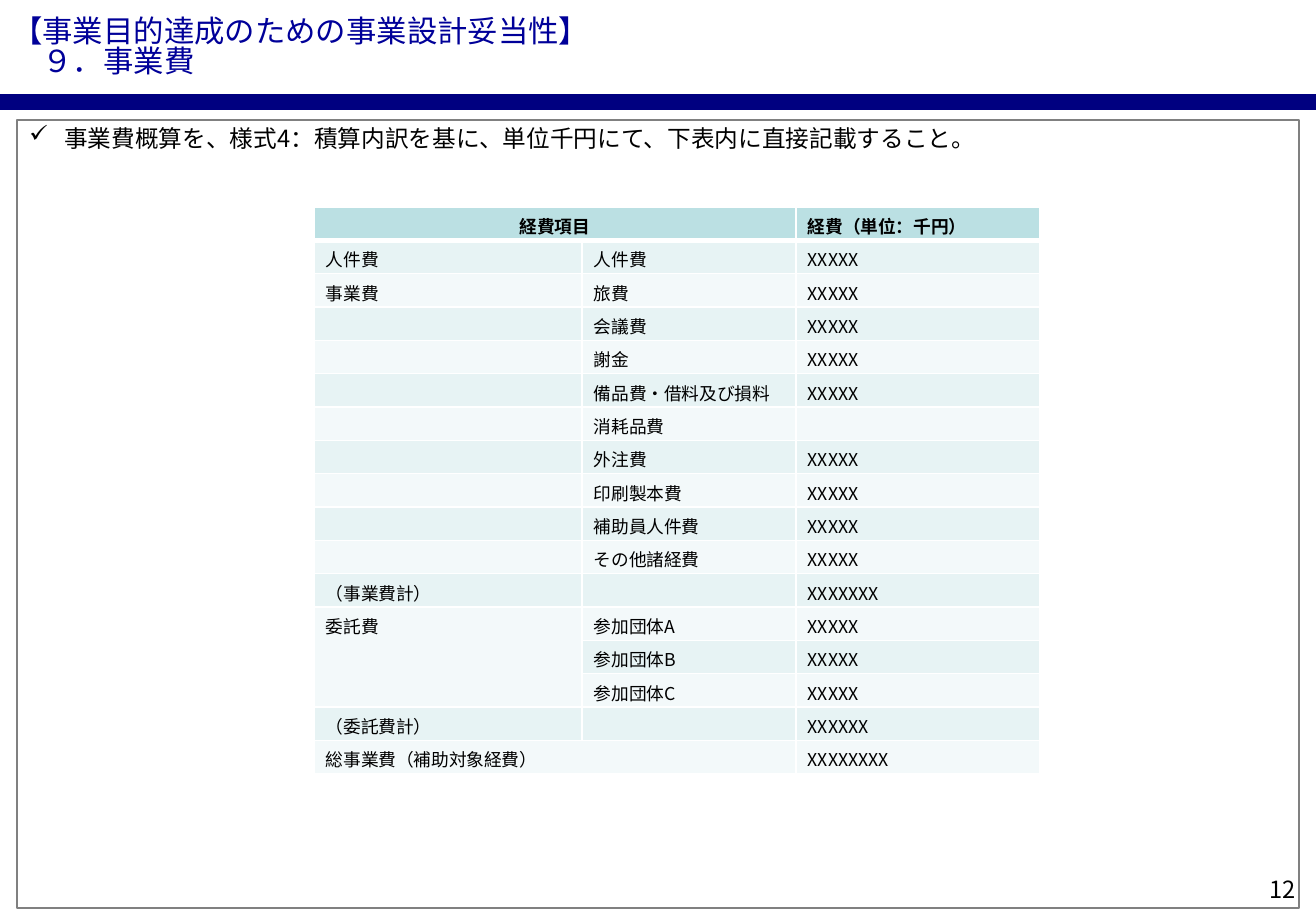
"""Builds the project cost slide with its expense table."""
from lxml.etree import SubElement
from pptx import Presentation
from pptx.dml.color import RGBColor
from pptx.enum.shapes import MSO_CONNECTOR as Connector
from pptx.enum.text import MSO_ANCHOR as Anchor, MSO_AUTO_SIZE as AutoSize, PP_ALIGN as Align
from pptx.oxml.ns import qn
from pptx.util import Emu, Pt

PX = 914400 / 121.5
FONT = "Noto Sans CJK JP"
BLACK = RGBColor(0x00, 0x00, 0x00)
WHITE = RGBColor(0xFF, 0xFF, 0xFF)
TITLE_BLUE = RGBColor(0x00, 0x00, 0x99)
RULE_NAVY = RGBColor(0x00, 0x00, 0x80)
FRAME_GREY = RGBColor(0x80, 0x80, 0x80)
HEADER_TEAL = RGBColor(0xBB, 0xE0, 0xE3)
BANDS = (RGBColor(0xF3, 0xF9, 0xFA), RGBColor(0xE7, 0xF3, 0xF4))

EXPENSES = [
    ("経費項目", "", "経費（単位：千円）"),
    ("人件費", "人件費", "XXXXX"),
    ("事業費", "旅費", "XXXXX"),
    ("", "会議費", "XXXXX"),
    ("", "謝金", "XXXXX"),
    ("", "備品費・借料及び損料", "XXXXX"),
    ("", "消耗品費", ""),
    ("", "外注費", "XXXXX"),
    ("", "印刷製本費", "XXXXX"),
    ("", "補助員人件費", "XXXXX"),
    ("", "その他諸経費", "XXXXX"),
    ("（事業費計）", "", "XXXXXXX"),
    ("委託費", "参加団体A", "XXXXX"),
    ("", "参加団体B", "XXXXX"),
    ("", "参加団体C", "XXXXX"),
    ("（委託費計）", "", "XXXXXX"),
    ("総事業費（補助対象経費）", "", "XXXXXXXX"),
]
MERGES = [((0, 0), (0, 1)), ((12, 0), (14, 0)), ((16, 0), (16, 1))]


def px(length):
    return Emu(round(length * PX))


def put_text(frame, text, size, color=BLACK, bold=False, align=Align.LEFT, spacing=None):
    frame.word_wrap = True
    for index, line in enumerate(text.split("\n")):
        paragraph = frame.paragraphs[0] if index == 0 else frame.add_paragraph()
        paragraph.alignment = align
        paragraph.space_before = Pt(0)
        if spacing:
            paragraph.line_spacing = spacing
        if not line:
            SubElement(paragraph._p, qn("a:endParaRPr"), sz=str(round(size * 100)))
            continue
        run = paragraph.add_run()
        run.text = line
        run.font.size = Pt(size)
        run.font.bold = bold
        run.font.color.rgb = color
        run.font.name = FONT
        SubElement(run.font._element, qn("a:ea"), typeface=FONT)


class CostSlide:
    def __init__(self, deck):
        self.slide = deck.slides.add_slide(deck.slide_layouts[1])
        self.shapes = self.slide.shapes

    def place(self, shape, left, top, width, height):
        shape.left, shape.top = px(left), px(top)
        shape.width, shape.height = px(width), px(height)
        shape.text_frame.auto_size = AutoSize.NONE

    def title(self, text, *box):
        heading = self.shapes.title
        self.place(heading, *box)
        heading.text_frame.vertical_anchor = Anchor.MIDDLE
        put_text(heading.text_frame, text, 18, color=TITLE_BLUE, spacing=0.82)

    def checklist(self, text, *box):
        body = self.slide.placeholders[1]
        self.place(body, *box)
        body.line.color.rgb = FRAME_GREY
        body.line.width = Pt(0.75)
        body.text_frame.margin_top = px(4)
        put_text(body.text_frame, text, 14)
        for paragraph in body.text_frame.paragraphs:
            props = paragraph._p.get_or_add_pPr()
            props.set("marL", str(px(35)))
            props.set("indent", str(px(-35)))
            SubElement(props, qn("a:buFont"), typeface="Wingdings")
            SubElement(props, qn("a:buChar"), char="ü")

    def rule(self, left, right, y):
        bar = self.shapes.add_connector(Connector.STRAIGHT, px(left), px(y), px(right), px(y))
        bar.line.color.rgb = RULE_NAVY
        bar.line.width = Pt(10)
        SubElement(bar._element.spPr, qn("a:effectLst"))

    def page_number(self, text, *box):
        number = self.shapes.add_textbox(*map(px, box))
        put_text(number.text_frame, text, 14, align=Align.CENTER)

    def border(self, cell, bottom):
        props = cell._tc.get_or_add_tcPr()
        for side, width in (("L", 1), ("R", 1), ("T", 1), ("B", bottom)):
            edge = SubElement(props, qn(f"a:ln{side}"), w=str(Pt(width)))
            fill = SubElement(edge, qn("a:solidFill"))
            SubElement(fill, qn("a:srgbClr"), val=str(WHITE))

    def table(self, rows, widths, merges, *box):
        costs = self.shapes.add_table(len(rows), len(widths), *map(px, box)).table
        costs.first_row = costs.horz_banding = False
        for column, width in zip(costs.columns, widths):
            column.width = px(width)
        for r, row in enumerate(rows):
            for c, text in enumerate(row):
                cell = costs.cell(r, c)
                header = r == 0
                cell.margin_left = cell.margin_right = px(12)
                cell.margin_top, cell.margin_bottom = px(6), px(0)
                self.border(cell, 3 if header else 1)
                cell.fill.solid()
                cell.fill.fore_color.rgb = HEADER_TEAL if header else BANDS[r % 2]
                align = Align.CENTER if header and c == 0 else Align.LEFT
                put_text(cell.text_frame, text, 10.5, bold=header, align=align)
        for first, last in merges:
            costs.cell(*first).merge(costs.cell(*last))


def main():
    deck = Presentation()
    deck.slide_width, deck.slide_height = px(1316), px(911)
    page = CostSlide(deck)
    page.title("【事業目的達成のための事業設計妥当性】\n\u3000９．事業費".replace("\u3000", "　"), 0, 6, 1316, 85)
    page.checklist("事業費概算を、様式4：積算内訳を基に、単位千円にて、下表内に直接記載すること。",
                   17, 120, 1282, 788)
    page.rule(0, 1316, 102)
    page.table(EXPENSES, (268, 214, 244), MERGES, 314, 207, 726, 567)
    page.page_number("12", 1249, 869, 67, 41)
    deck.save("out.pptx")


if __name__ == "__main__":
    main()
